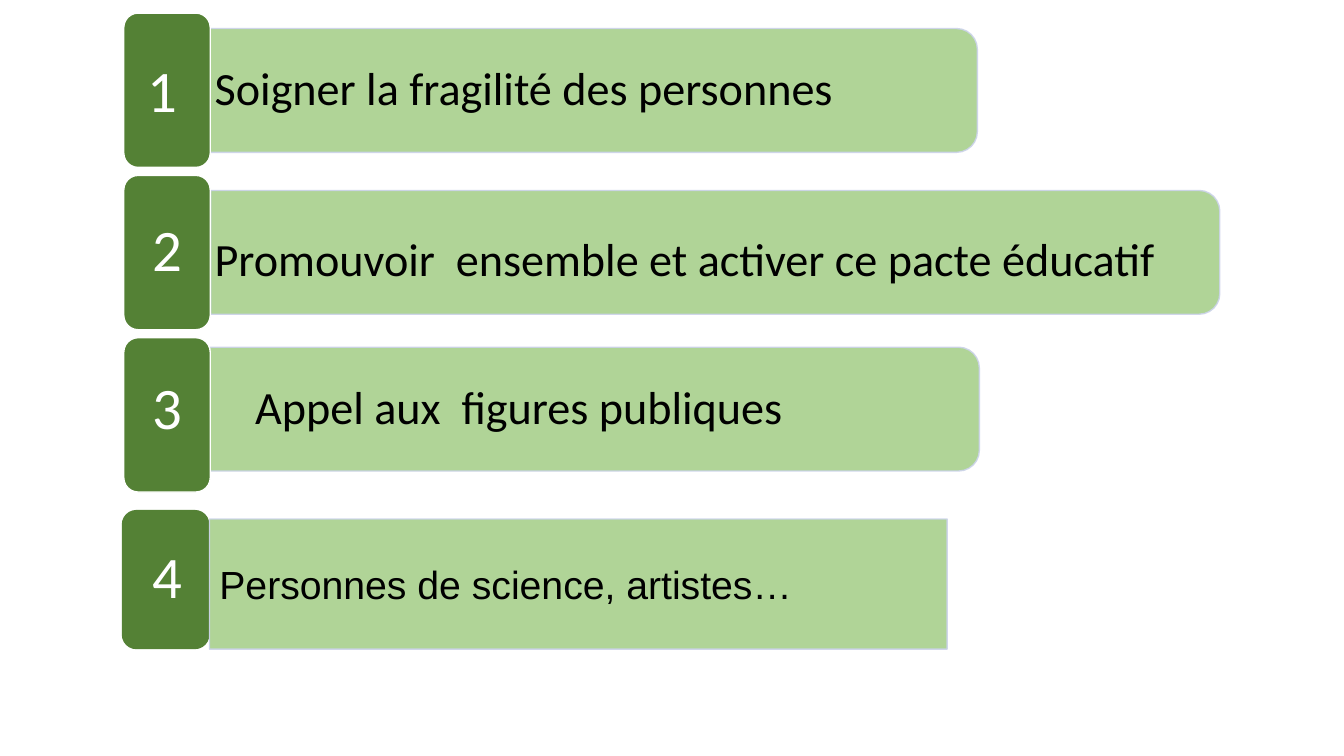
"""Build a slide with four numbered green bars."""
from lxml import etree
from pptx import Presentation
from pptx.dml.color import RGBColor
from pptx.enum.shapes import MSO_SHAPE
from pptx.enum.text import MSO_ANCHOR, PP_ALIGN
from pptx.oxml.ns import qn
from pptx.util import Cm, Pt

RECT, ROUNDED = MSO_SHAPE.RECTANGLE, MSO_SHAPE.ROUNDED_RECTANGLE
ROUND_TOP = MSO_SHAPE.ROUND_2_SAME_RECTANGLE
LEFT, CENTER = PP_ALIGN.LEFT, PP_ALIGN.CENTER
MIDDLE = MSO_ANCHOR.MIDDLE
BADGE, BAR, BAR_LINE = "548135", "A8D08C", "CCD3EA"
WHITE, BLACK = "FFFFFF", "000000"

ROUND_ROWS = [
    dict(number="1", text="Soigner la fragilité des personnes", bar=(5.07, 0.72, 19.56, 3.12),
         label=(5.05, 0.86, 19.38, 2.82), badge=(3.12, 0.33, 2.18, 3.89), insets=(0, 0.18, 0.23, 0)),
    dict(number="2", text="Promouvoir  ensemble et activer ce pacte éducatif", bar=(5.31, 4.8, 25.43, 3.12),
         label=(5.05, 5.18, 25.25, 2.82), badge=(3.12, 4.42, 2.18, 3.89), insets=(0, 0, 0, 0)),
    dict(number="3", text="Appel aux  figures publiques", bar=(5.12, 8.75, 19.56, 3.12),
         label=(6.07, 8.92, 19.38, 2.82), badge=(3.12, 8.51, 2.18, 3.89), insets=(0, 0, 0, 0.23)),
]
LAST_ROW = dict(number="4", text="Personnes de science, artistes…", bar=(5.28, 13.08, 18.59, 3.28),
                badge=(3.07, 12.85, 2.21, 3.51), insets=(0.1, 0, 0, 0))


def rgb(value):
    return RGBColor.from_string(value)


def add_text(sp, text, size, color, font="Calibri", align=LEFT, spacing=0.9, insets=(0.36, 0.18, 0.36, 0.18)):
    tf = sp.text_frame
    tf.word_wrap = True
    tf.vertical_anchor = MIDDLE
    tf.margin_left, tf.margin_top, tf.margin_right, tf.margin_bottom = map(Cm, insets)
    p = tf.paragraphs[0]
    p.alignment, p.line_spacing = align, spacing
    r = p.add_run()
    r.text = text
    r.font.name, r.font.size, r.font.color.rgb = font, Pt(size), rgb(color)


def add_box(s, kind, box, fill, line=None):
    sp = s.shapes.add_shape(kind, *map(Cm, box))
    sp.shadow.inherit = False
    sp.fill.solid()
    sp.fill.fore_color.rgb = rgb(fill)
    if line:
        sp.line.color.rgb, sp.line.width = rgb(line), Pt(1)
    else:
        sp.line.fill.background()
    return sp


def add_bar(s, kind, box):
    sp = add_box(s, kind, box, BAR, BAR_LINE)
    for color in sp._element.spPr.iter(qn("a:srgbClr")):
        etree.SubElement(color, qn("a:alpha")).set("val", "90000")
    return sp


def add_badge(s, row, line=None):
    sp = add_box(s, ROUNDED, row["badge"], BADGE, line)
    add_text(sp, row["number"], 42, WHITE, align=CENTER, insets=row["insets"])


def add_round_row(s, row):
    x, y, w, h = row["bar"]
    upright = (x + (w - h) / 2, y - (w - h) / 2, h, w)
    bar = add_bar(s, ROUND_TOP, upright)
    bar.rotation = 90
    bar.adjustments[0] = 0.167
    label = s.shapes.add_textbox(*map(Cm, row["label"]))
    add_text(label, row["text"], 33, BLACK)
    add_badge(s, row, WHITE)


def main():
    prs = Presentation()
    prs.slide_width, prs.slide_height = Cm(33.87), Cm(19.05)
    s = prs.slides.add_slide(prs.slide_layouts[6])
    for row in ROUND_ROWS:
        add_round_row(s, row)
    add_badge(s, LAST_ROW)
    bar = add_bar(s, RECT, LAST_ROW["bar"])
    add_text(bar, LAST_ROW["text"], 28, BLACK, font="Arial", spacing=1.0, insets=(0.25,) * 4)
    prs.save("out.pptx")


if __name__ == "__main__":
    main()
